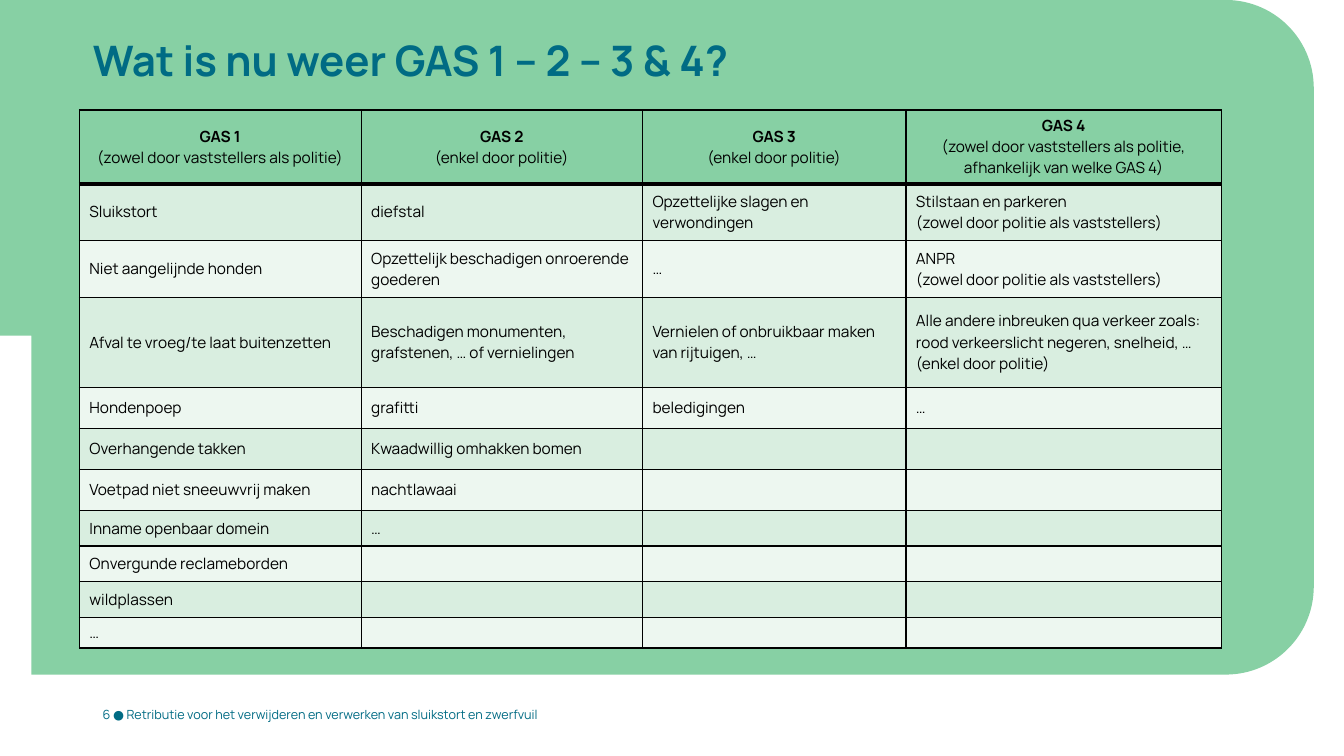
import math
from dataclasses import dataclass

from lxml import etree
from pptx import Presentation
from pptx.dml.color import RGBColor
from pptx.enum.text import MSO_ANCHOR, PP_ALIGN
from pptx.oxml.ns import qn
from pptx.util import Cm, Pt

MIDDLE, TOP = MSO_ANCHOR.MIDDLE, MSO_ANCHOR.TOP
CENTER, LEFT = PP_ALIGN.CENTER, PP_ALIGN.LEFT


@dataclass(frozen=True)
class Theme:
    font: str = "Manrope"
    green: str = "87D0A4"
    band_dark: str = "D9EEE0"
    band_light: str = "EDF7F0"
    teal: str = "006B84"
    black: str = "000000"
    title_size: int = 30
    table_size: int = 11
    footer_size: int = 9
    grid_line: int = 1
    header_line: int = 3


THEME = Theme()

COL_WIDTHS = [7.1, 7.09, 6.64, 7.95]
ROW_HEIGHTS = [1.86, 1.43, 1.43, 2.27, 1.04, 1.03, 1.03, 0.9, 0.9, 0.89, 0.78]

HEADERS = [
    ("GAS 1", "(zowel door vaststellers als politie)"),
    ("GAS 2", "(enkel door politie)"),
    ("GAS 3", "(enkel door politie)"),
    ("GAS 4", "(zowel door vaststellers als politie, afhankelijk van welke GAS 4)"),
]
COLUMNS = [
    ["Sluikstort", "Niet aangelijnde honden", "Afval te vroeg/te laat buitenzetten",
     "Hondenpoep", "Overhangende takken", "Voetpad niet sneeuwvrij maken",
     "Inname openbaar domein", "Onvergunde reclameborden", "wildplassen", "…"],
    ["diefstal", "Opzettelijk beschadigen onroerende goederen",
     "Beschadigen monumenten, grafstenen, … of vernielingen", "grafitti",
     "Kwaadwillig omhakken bomen", "nachtlawaai", "…"],
    ["Opzettelijke slagen en verwondingen", "…",
     "Vernielen of onbruikbaar maken van rijtuigen, …", "beledigingen"],
    ["Stilstaan en parkeren\n(zowel door politie als vaststellers)",
     "ANPR\n(zowel door politie als vaststellers)",
     "Alle andere inbreuken qua verkeer zoals: rood verkeerslicht negeren, "
     "snelheid, … (enkel door politie)", "…"],
]


def add_run(p, text, size, color, bold=False):
    r = p.add_run()
    r.text = text
    r.font.name = THEME.font
    r.font.size = Pt(size)
    r.font.bold = bold
    r.font.color.rgb = RGBColor.from_string(color)


def add_panel(slide, left, top, width, height):
    radius, step_x, step_y = 2.22, 0.79, 8.46
    right, bottom = left + width, top + height

    def corner(cy, start):
        angles = [math.radians(start + 3 * i) for i in range(31)]
        return [(right - radius + radius * math.cos(a), cy + radius * math.sin(a))
                for a in angles]

    outline = [
        (left, top),
        *corner(top + radius, -90),
        *corner(bottom - radius, 0),
        (left + step_x, bottom),
        (left + step_x, top + step_y),
        (left, top + step_y),
    ]
    points = [(Cm(x), Cm(y)) for x, y in outline]
    builder = slide.shapes.build_freeform(*points[0])
    builder.add_line_segments(points[1:])
    sp = builder.convert_to_shape()
    sp.shadow.inherit = False
    sp.fill.solid()
    sp.fill.fore_color.rgb = RGBColor.from_string(THEME.green)
    sp.line.fill.background()


def add_text(slide, left, top, width, height, anchor):
    tf = slide.shapes.add_textbox(Cm(left), Cm(top), Cm(width), Cm(height)).text_frame
    tf.word_wrap = True
    tf.vertical_anchor = anchor
    return tf


def add_title(slide, left, top, width, height):
    tf = add_text(slide, left, top, width, height, TOP)
    tf.margin_left = tf.margin_top = tf.margin_right = tf.margin_bottom = 0
    p = tf.paragraphs[0]
    p.line_spacing = 0.9
    add_run(p, "Wat is nu weer GAS 1 – 2 – 3 & 4?", THEME.title_size, THEME.teal, True)


def add_footer(slide, left, top, width, height):
    p = add_text(slide, left, top, width, height, MIDDLE).paragraphs[0]
    add_run(p, "6 ● Retributie voor het verwijderen en verwerken van sluikstort en zwerfvuil",
            THEME.footer_size, THEME.teal)


def style_cell(cell, fill, top_line, bottom_line):
    cell.vertical_anchor = MIDDLE
    cell.fill.solid()
    cell.fill.fore_color.rgb = RGBColor.from_string(fill)
    tc_pr = cell._tc.get_or_add_tcPr()
    sides = {"L": THEME.grid_line, "R": THEME.grid_line, "T": top_line, "B": bottom_line}
    for i, (side, width) in enumerate(sides.items()):
        ln = etree.Element(qn(f"a:ln{side}"), w=str(Pt(width)))
        solid = etree.SubElement(ln, qn("a:solidFill"))
        etree.SubElement(solid, qn("a:srgbClr"), val=THEME.black)
        tc_pr.insert(i, ln)


def write_cell(cell, lines, header):
    p = cell.text_frame.paragraphs[0]
    p.alignment = CENTER if header else LEFT
    for i, line in enumerate(lines):
        if i:
            p.add_line_break()
        add_run(p, line, THEME.table_size, THEME.black, header and i == 0)
    etree.SubElement(p._p, qn("a:endParaRPr"), sz=str(THEME.table_size * 100))


def add_gas_table(slide, left, top, width, height):
    table = slide.shapes.add_table(len(ROW_HEIGHTS), len(COL_WIDTHS), Cm(left), Cm(top),
                                   Cm(width), Cm(height)).table
    for col, w in zip(table.columns, COL_WIDTHS):
        col.width = Cm(w)
    for row, h in zip(table.rows, ROW_HEIGHTS):
        row.height = Cm(h)
    for c, (heading, column) in enumerate(zip(HEADERS, COLUMNS)):
        for r in range(len(ROW_HEIGHTS)):
            cell = table.cell(r, c)
            if r == 0:
                fill, lines = THEME.green, heading
            else:
                fill = THEME.band_dark if r % 2 else THEME.band_light
                lines = column[r - 1].split("\n") if r <= len(column) else []
            style_cell(cell, fill,
                       THEME.header_line if r == 1 else THEME.grid_line,
                       THEME.header_line if r == 0 else THEME.grid_line)
            write_cell(cell, lines, r == 0)


def main():
    prs = Presentation()
    prs.slide_width, prs.slide_height = Cm(33.87), Cm(19.05)
    slide = prs.slides.add_slide(prs.slide_layouts[6])
    add_panel(slide, 0, 0, 33.11, 17)
    add_footer(slide, 2.34, 17.5, 13.74, 1.02)
    add_title(slide, 2.34, 1.02, 26.14, 1.32)
    add_gas_table(slide, 2, 2.77, sum(COL_WIDTHS), sum(ROW_HEIGHTS))
    prs.save("out.pptx")


if __name__ == "__main__":
    main()
